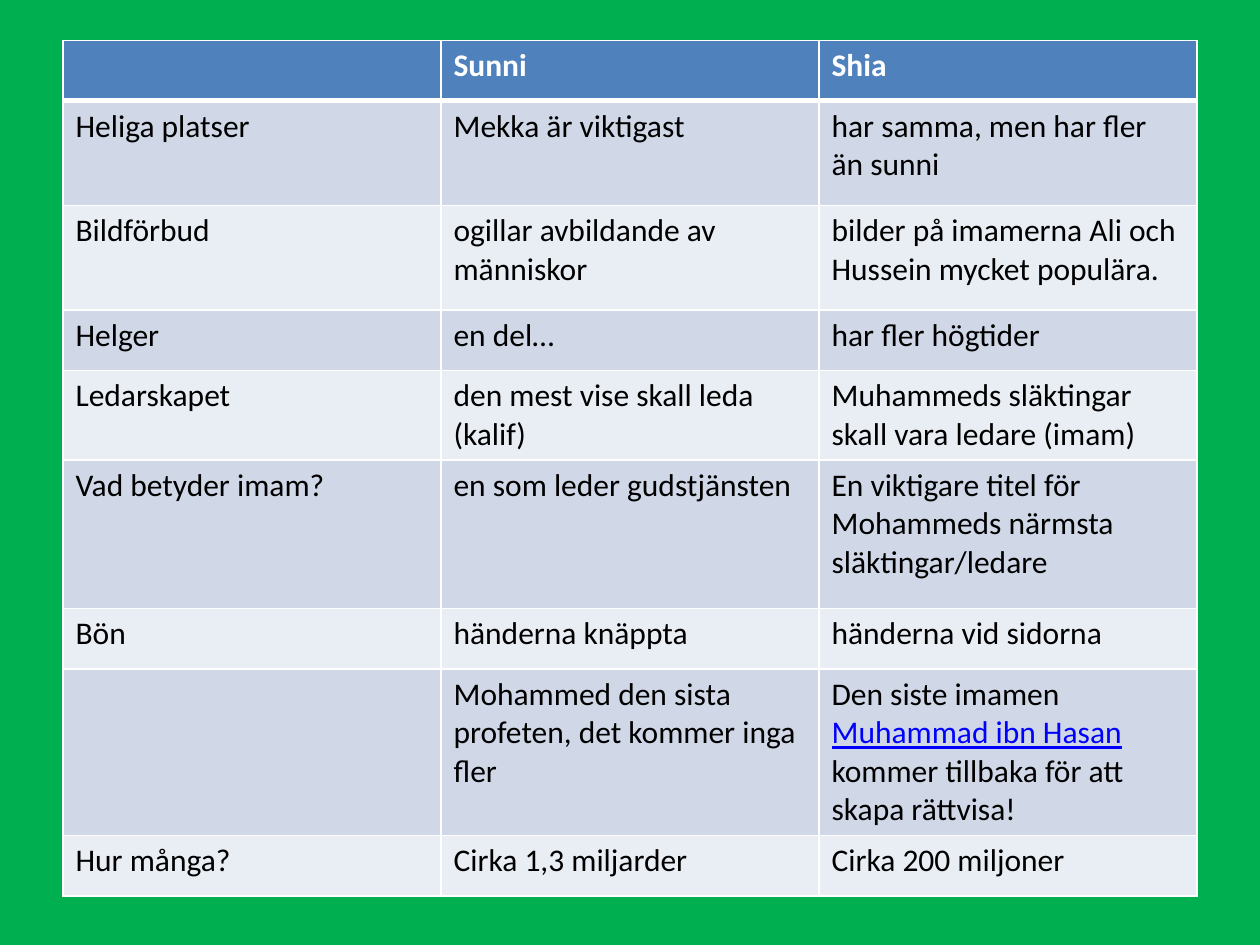
from lxml.etree import SubElement
from pptx import Presentation
from pptx.dml.color import RGBColor as Color
from pptx.oxml.ns import qn
from pptx.util import Inches, Pt

GREEN = Color(0x00, 0xB0, 0x50)
BLUE = Color(0x4F, 0x81, 0xBD)
BANDS = Color(0xD0, 0xD8, 0xE8), Color(0xE9, 0xED, 0xF4)
WHITE = Color(0xFF, 0xFF, 0xFF)
BLACK = Color(0x00, 0x00, 0x00)
LINK = Color(0x00, 0x00, 0xFF)

BODY = {"name": "Calibri", "size": Pt(18), "bold": False, "color": BLACK}
HEADING = BODY | {"bold": True, "color": WHITE}
LINKED = BODY | {"underline": True, "color": LINK}

LINE, SHORT, MEDIUM, TALL = 1, 0.48, 0.83, 1.18
HEADER_LINE = 3

# Row height in inches and cell texts; a list holds paragraphs, a tuple holds spans.
ROWS = [
    (SHORT, ["", "Sunni", "Shia"]),
    (MEDIUM, ["Heliga platser", "Mekka är viktigast", "har samma, men har fler än sunni"]),
    (MEDIUM, ["Bildförbud", "ogillar avbildande av människor",
              "bilder på imamerna Ali och Hussein mycket populära."]),
    (SHORT, ["Helger", "en del…", "har fler högtider"]),
    (SHORT, ["Ledarskapet", ["den mest vise skall leda", "(kalif)"],
             "Muhammeds släktingar skall vara ledare (imam)"]),
    (TALL, ["Vad betyder imam?", "en som leder gudstjänsten",
            "En viktigare titel för Mohammeds närmsta släktingar/ledare"]),
    (SHORT, ["Bön", "händerna knäppta", "händerna vid sidorna"]),
    (TALL, ["", "Mohammed den sista profeten, det kommer inga fler",
            [(("Den siste imamen ", BODY), ("Muhammad ibn Hasan", LINKED),
              (" kommer tillbaka för att skapa rättvisa!", BODY))]]),
    (SHORT, ["Hur många?", "Cirka 1,3 miljarder", "Cirka 200 miljoner"]),
]


class SlideBuilder:
    def __init__(self, deck, background):
        self.deck = deck
        self.slide = deck.slides.add_slide(deck.slide_layouts[6])
        fill = self.slide.background.fill
        fill.solid()
        fill.fore_color.rgb = background

    def table(self, left, top, width, rows):
        """Place a table; left, top and width are shares of the slide's size."""
        page_width, page_height = self.deck.slide_width, self.deck.slide_height
        columns = len(rows[0][1])
        height = Inches(sum(row_height for row_height, _ in rows))
        frame = self.slide.shapes.add_table(
            len(rows), columns, int(left * page_width), int(top * page_height),
            int(width * page_width), height)
        for number, (row_height, contents) in enumerate(rows):
            frame.table.rows[number].height = Inches(row_height)
            is_header = number == 0
            fill = BLUE if is_header else BANDS[(number - 1) % 2]
            style = HEADING if is_header else BODY
            borders = {"L": LINE, "R": LINE,
                       "T": HEADER_LINE if number == 1 else LINE,
                       "B": HEADER_LINE if is_header else LINE}
            for column, content in enumerate(contents):
                cell = frame.table.cell(number, column)
                self.borders(cell, borders)
                cell.fill.solid()
                cell.fill.fore_color.rgb = fill
                self.text(cell.text_frame, content, style)

    def borders(self, cell, widths):
        properties = cell._tc.get_or_add_tcPr()
        for side, width in widths.items():
            line = SubElement(properties, qn(f"a:ln{side}"), w=str(Pt(width)))
            SubElement(SubElement(line, qn("a:solidFill")), qn("a:srgbClr"), val=str(WHITE))

    def text(self, text_frame, content, style):
        paragraphs = content if isinstance(content, list) else [content]
        for number, spans in enumerate(paragraphs):
            para = text_frame.add_paragraph() if number else text_frame.paragraphs[0]
            if isinstance(spans, str):
                spans = ((spans, style),) if spans else ()
            for words, span_style in spans:
                span = para.add_run()
                span.text = words
                self.format(span.font, span_style)

    def format(self, font, style):
        for name, value in style.items():
            if name == "color":
                font.color.rgb = value
            else:
                setattr(font, name, value)


def main():
    deck = Presentation()
    deck.slide_width, deck.slide_height = Inches(10), Inches(7.5)
    page = SlideBuilder(deck, GREEN)
    page.table(left=0.05, top=0.32 / 7.5, width=0.9, rows=ROWS)
    deck.save("out.pptx")


if __name__ == "__main__":
    main()
